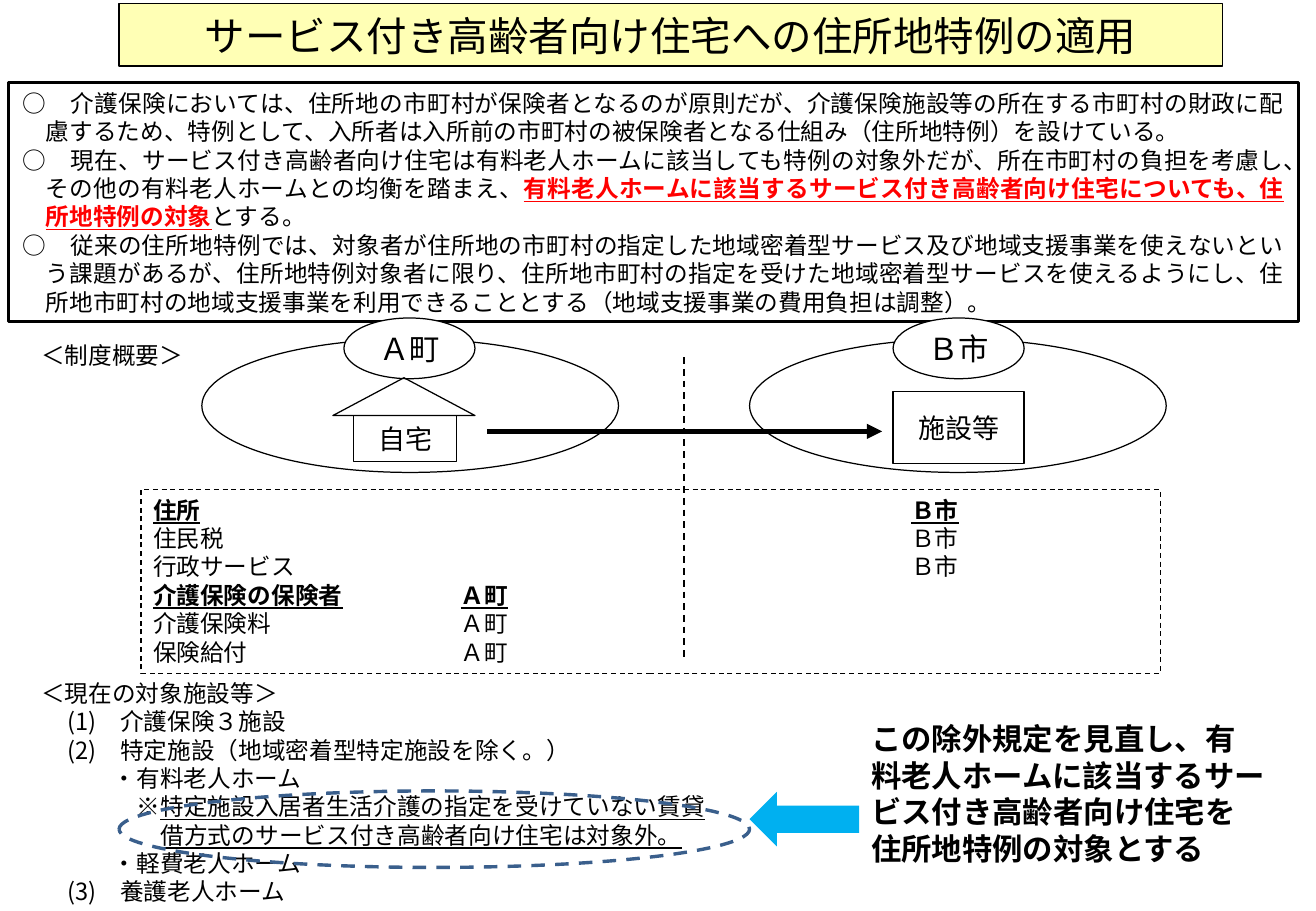
from pptx import Presentation, util as u
from pptx.dml.color import RGBColor
from pptx.enum import dml, shapes, text
from pptx.oxml.ns import qn
from lxml import etree

COLORS = {"ink": "000000", "paper": "FFFFFF", "title": "FFFF00", "alert": "FF0000",
          "arrow": "00B0F0", "ring": "3A5F8C"}
GOTHIC, LATIN = "Noto Sans CJK JP", "Calibri"
KEY = {"bold": True, "underline": True}

# Content: a paragraph is a list of (text, format) spans
TITLE = "サービス付き高齢者向け住宅への住所地特例の適用"
SUMMARY = [
    [("○　介護保険においては、住所地の市町村が保険者となるのが原則だが、介護保険施設等の所在する市町村の財政に配慮するため、"
      "特例として、入所者は入所前の市町村の被保険者となる仕組み（住所地特例）を設けている。", {})],
    [("○　現在、サービス付き高齢者向け住宅は有料老人ホームに該当しても特例の対象外だが、所在市町村の負担を考慮し、"
      "その他の有料老人ホームとの均衡を踏まえ、", {}),
     ("有料老人ホームに該当するサービス付き高齢者向け住宅についても、住所地特例の対象", {**KEY, "color": "alert"}),
     ("とする。", {})],
    [("○　従来の住所地特例では、対象者が住所地の市町村の指定した地域密着型サービス及び地域支援事業を使えないという課題があるが、"
      "住所地特例対象者に限り、住所地市町村の指定を受けた地域密着型サービスを使えるようにし、"
      "住所地市町村の地域支援事業を利用できることとする（地域支援事業の費用負担は調整）。", {})],
]
TOWNS = [("Ａ町", 4.22, 7.19), ("Ｂ市", 15.67, 18.67)]  # name, area left, label left
DUTIES = [("住所", "Ｂ市", KEY), ("住民税", "Ｂ市", {}), ("行政サービス", "Ｂ市", {}),
          ("介護保険の保険者", "Ａ町", KEY), ("介護保険料", "Ａ町", {}), ("保険給付", "Ａ町", {})]
TOWN_TABS = {"Ａ町": 6.43, "Ｂ市": 15.85}
FACILITIES = [  # left margin, first-line indent, spans
    (0, 0, [("＜現在の対象施設等＞", {})]),
    (0.55, 0, [("(1)　介護保険３施設", {})]),
    (0.55, 0, [("(2)　特定施設（地域密着型特定施設を除く。）", {})]),
    (1.5, 0, [("・有料老人ホーム", {})]),
    (2.5, -0.5, [("※", {}), ("特定施設入居者生活介護の指定を受けていない賃貸借方式の"
                            "サービス付き高齢者向け住宅は対象外。", {"underline": True})]),
    (1.5, 0, [("・軽費老人ホーム", {})]),
    (0.55, 0, [("(3)　養護老人ホーム", {})]),
]
CALLOUT = "この除外規定を見直し、有料老人ホームに該当するサービス付き高齢者向け住宅を住所地特例の対象とする"

deck = Presentation()
deck.slide_width, deck.slide_height = u.Cm(27.51), u.Cm(19.05)
page = deck.slides.add_slide(deck.slide_layouts[6])


def rgb(name):
    return RGBColor.from_string(COLORS[name])


def draw_line(line, color, width, dashed=False):
    line.color.rgb = rgb(color)
    line.width = u.Pt(width)
    if dashed:
        line.dash_style = dml.MSO_LINE.DASH


def add_box(kind, area, fill=None, line="ink", width=0.75, dashed=False):
    box = page.shapes.add_shape(getattr(shapes.MSO_SHAPE, kind), *map(u.Cm, area))
    box.shadow.inherit = False
    if fill:
        box.fill.solid()
        box.fill.fore_color.rgb = rgb(fill)
    else:
        box.fill.background()
    if line:
        draw_line(box.line, line, width, dashed)
    else:
        box.line.fill.background()
    return box


def add_text(area):
    return page.shapes.add_textbox(*map(u.Cm, area))


def add_line(start, end, width, dashed=False):
    line = page.shapes.add_connector(shapes.MSO_CONNECTOR.STRAIGHT, *map(u.Cm, start + end))
    draw_line(line.line, "ink", width, dashed)
    etree.SubElement(line._element.spPr, qn("a:effectLst"))
    return line


def write(box, paras, size, font=GOTHIC, align="LEFT", middle=False, wrap=True):
    frame = box.text_frame
    frame.word_wrap = wrap
    frame.vertical_anchor = text.MSO_ANCHOR.MIDDLE if middle else text.MSO_ANCHOR.TOP
    for i, spans in enumerate(paras):
        para = frame.paragraphs[0] if i == 0 else frame.add_paragraph()
        para.alignment = getattr(text.PP_ALIGN, align)
        para.line_spacing = u.Pt(size * 1.2)
        for words, extra in spans:
            span = para.add_run()
            span.text = words
            form = {"name": font, "size": u.Pt(size), "bold": False, **extra}
            span.font.color.rgb = rgb(form.pop("color", "ink"))
            for key, value in form.items():
                setattr(span.font, key, value)
            east = etree.SubElement(span.font._element, qn("a:ea"))
            east.set("typeface", GOTHIC)
    return frame.paragraphs


def indent(para, left, first):
    props = para._p.get_or_add_pPr()
    props.set("marL", str(u.Cm(left)))
    props.set("indent", str(u.Cm(first)))


# Summary and title
summary = add_box("RECTANGLE", (0.18, 1.73, 26.97, 5), "paper", width=2)
for side, inset in {"left": 0.3, "top": 0.13, "right": 0.3, "bottom": 0.3}.items():
    setattr(summary.text_frame, "margin_" + side, u.Cm(inset))
for para in write(summary, SUMMARY, 14, align="JUSTIFY"):
    indent(para, 0.48, -0.48)

title = add_box("RECTANGLE", (2.49, 0.08, 23.06, 1.3), "title")
tint = title._element.spPr.find(qn("a:solidFill"))[0]
etree.SubElement(tint, qn("a:alpha")).set("val", "29000")
write(title, [[(TITLE, {})]], 24, align="CENTER", middle=True)

# Facilities covered today
covered = add_text((0.61, 14.07, 14.78, 4.98))
paras = write(covered, [spans for _, _, spans in FACILITIES], 14)
for para, (left, first, _) in zip(paras, FACILITIES):
    indent(para, left, first)

# Towns, home and facility
label = {"font": LATIN, "align": "CENTER", "middle": True, "wrap": False}
for name, area_left, name_left in TOWNS:
    add_box("OVAL", (area_left, 7.09, 8.71, 2.79))
    write(add_box("OVAL", (name_left, 6.65, 2.74, 1.27), "paper"), [[(name, {})]], 18, **label)
home = add_box("RECTANGLE", (7.39, 8.69, 2.16, 0.97))
write(home, [[("自宅", {})]], 16, **label)
add_box("ISOSCELES_TRIANGLE", (6.96, 7.9, 2.97, 0.79))
facility = add_box("RECTANGLE", (18.67, 8.18, 2.74, 1.52))
write(facility, [[("施設等", {})]], 16, **label)
move = add_line((10.19, 9.02), (18.44, 9.02), 3)
etree.SubElement(move.line._get_or_add_ln(), qn("a:tailEnd")).set("type", "triangle")

# Who is responsible for what, in tabbed columns
duties = add_box("RECTANGLE", (2.95, 10.24, 21.31, 3.84), dashed=True)
rows = [[(duty, form), ("\t", {}), (town, form)] for duty, town, form in DUTIES]
for para, (_, town, _) in zip(write(duties, rows, 14), DUTIES):
    tabs = etree.SubElement(para._p.get_or_add_pPr(), qn("a:tabLst"))
    stop = etree.SubElement(tabs, qn("a:tab"))
    stop.set("pos", str(u.Cm(TOWN_TABS[town])))
    stop.set("algn", "l")
add_line((14.3, 7.47), (14.3, 13.77), 1, dashed=True)
write(add_text((0.61, 7.01, 4.78, 0.86)), [[("＜制度概要＞", {})]], 14, LATIN)

# Exclusion to be revised
add_box("LEFT_ARROW", (15.67, 16.56, 2.29, 1.14), "arrow", line=None)
add_box("OVAL", (2.49, 16.54, 13.18, 1.6), line="ring", width=2, dashed=True)
write(add_text((17.96, 14.94, 8.74, 3.33)), [[(CALLOUT, {"bold": True})]], 18, LATIN)

deck.save("out.pptx")
